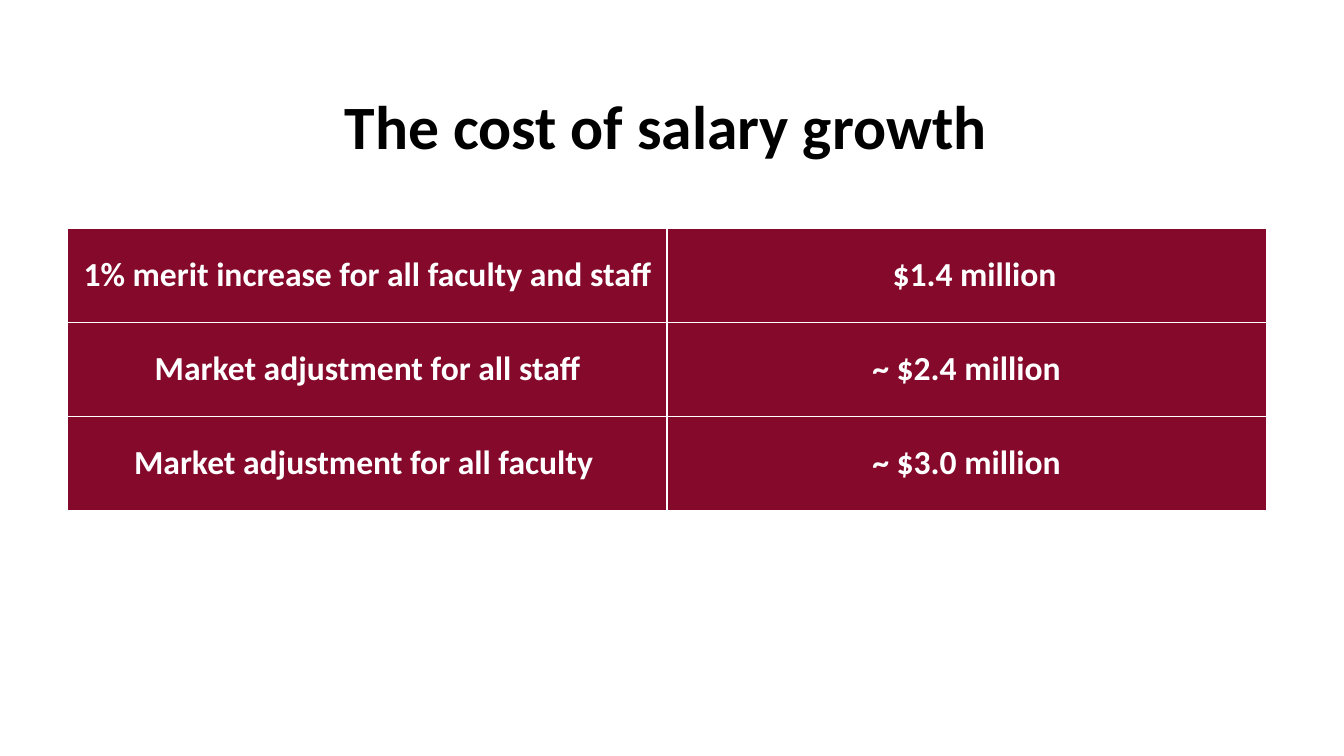
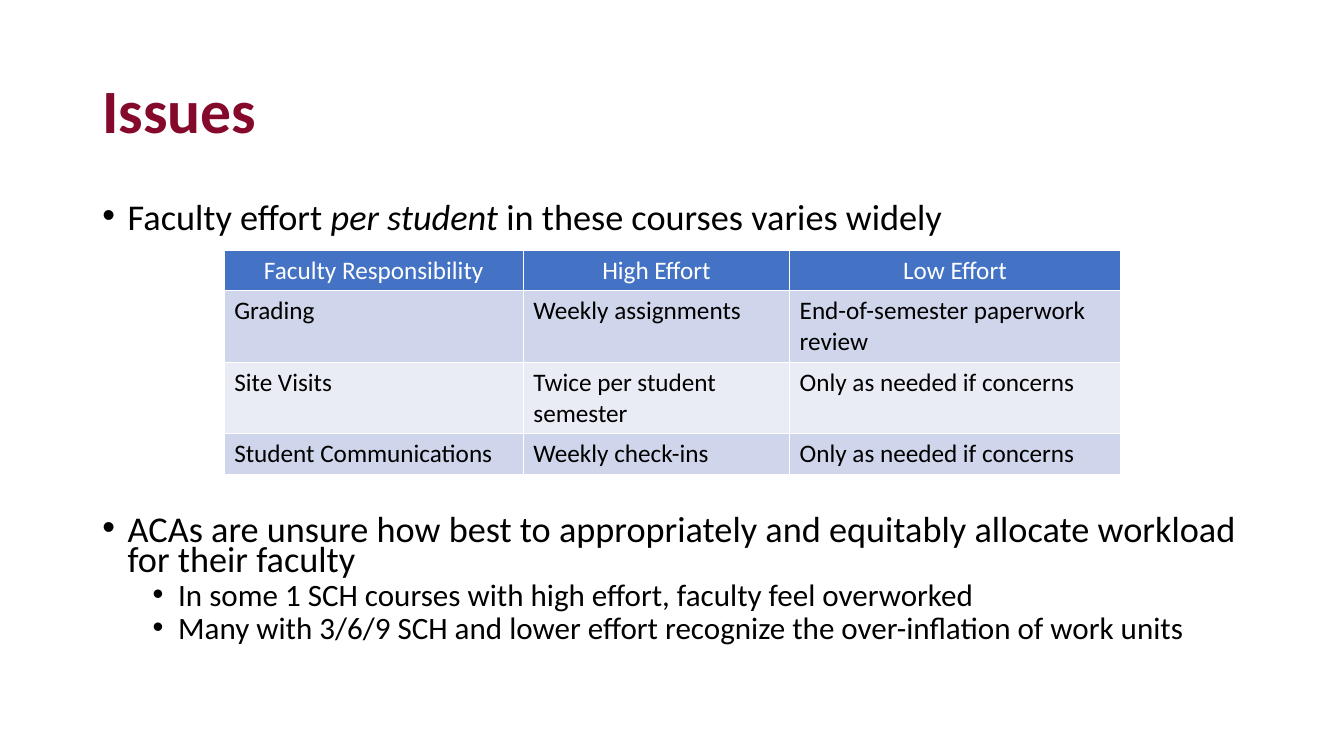
import lxml.etree
import pptx
import pptx.dml.color
import pptx.enum.text
import pptx.oxml.ns
import pptx.util

Cm, Pt = pptx.util.Cm, pptx.util.Pt
RGBColor = pptx.dml.color.RGBColor
ALIGN = pptx.enum.text.PP_ALIGN
ANCHOR = pptx.enum.text.MSO_ANCHOR
qn = pptx.oxml.ns.qn

MAROON = RGBColor(0x85, 0x09, 0x2A)
BLUE = RGBColor(0x44, 0x72, 0xC4)
BAND_DARK = RGBColor(0xCF, 0xD5, 0xEA)
BAND_LIGHT = RGBColor(0xE9, 0xEB, 0xF5)
BLACK = RGBColor(0, 0, 0)
WHITE = RGBColor(0xFF, 0xFF, 0xFF)

TITLE_FONT = {"name": "Calibri", "size": Pt(44), "bold": True}
COST_FONT = {"name": "Calibri", "size": Pt(24), "bold": True}
EFFORT_FONT = {"name": "Calibri", "size": Pt(18), "bold": False}
COST_CELL = {
    "vertical_anchor": ANCHOR.MIDDLE,
    "margin_left": Cm(0.33), "margin_right": Cm(0.33),
    "margin_top": Cm(0.18), "margin_bottom": Cm(0.18),
}


def add_run(paragraph, text, font, color):
    run = paragraph.add_run()
    run.text = text
    for name, value in font.items():
        setattr(run.font, name, value)
    run.font.color.rgb = color


def add_grid(slide, left, top, widths, heights, rows, row_styles, font, cell_format):
    """Draw a table with white rules; each row style is fill, text colour, alignment."""
    grid = slide.shapes.add_table(
        len(rows), len(widths), Cm(left), Cm(top), Cm(sum(widths)), Cm(sum(heights))).table
    for column, width in zip(grid.columns, widths):
        column.width = Cm(width)
    for r, (texts, height, (fill, color, align)) in enumerate(zip(rows, heights, row_styles)):
        grid.rows[r].height = Cm(height)
        for c, text in enumerate(texts):
            cell = grid.cell(r, c)
            for name, value in cell_format.items():
                setattr(cell, name, value)
            paragraph = cell.text_frame.paragraphs[0]
            paragraph.alignment = align
            add_run(paragraph, text, font, color)
            # Borders come before the fill in the cell properties
            properties = cell._tc.get_or_add_tcPr()
            for side in ("a:lnL", "a:lnR", "a:lnT", "a:lnB"):
                line = lxml.etree.SubElement(properties, qn(side), w=str(Pt(1)))
                solid = lxml.etree.SubElement(line, qn("a:solidFill"))
                lxml.etree.SubElement(solid, qn("a:srgbClr"), val=str(WHITE))
            cell.fill.solid()
            cell.fill.fore_color.rgb = fill
    return grid


deck = pptx.Presentation()
deck.slide_width, deck.slide_height = Cm(33.87), Cm(19.05)

# Slides and their titles: text, left, top, width, height, alignment, colour
titles = [
    ("The cost of salary growth", 1.55, 1.68, 30.48, 3.18, ALIGN.CENTER, BLACK),
    ("Issues", 2.33, 1.01, 29.21, 3.68, ALIGN.LEFT, MAROON),
]
slides = []
for text, left, top, width, height, align, color in titles:
    slide = deck.slides.add_slide(deck.slide_layouts[6])
    frame = slide.shapes.add_textbox(Cm(left), Cm(top), Cm(width), Cm(height)).text_frame
    frame.word_wrap = True
    frame.vertical_anchor = ANCHOR.MIDDLE
    heading = frame.paragraphs[0]
    heading.alignment, heading.line_spacing = align, 0.9
    add_run(heading, text, TITLE_FONT, color)
    slides.append(slide)
cost_slide, issues_slide = slides

# Salary costs
costs = [
    ("1% merit increase for all faculty and staff", "$1.4 million"),
    ("Market adjustment for all staff", "~ $2.4 million"),
    ("Market adjustment for all faculty ", "~ $3.0 million"),
]
cost_grid = add_grid(cost_slide, 1.71, 5.75, [15.1] * 2, [2.37] * 3, costs,
                     [(MAROON, WHITE, ALIGN.CENTER)] * 3, COST_FONT, COST_CELL)
cost_grid.cell(0, 1).margin_left = Cm(0.73)  # lines the amount up with those below

# Issues: each block is its top, its height and its (level, runs) bullets
issue_blocks = [
    (5.08, 1.2, [
        (0, [("Faculty effort ", False), ("per student", True),
             (" in these courses varies widely", False)]),
    ]),
    (12.93, 4.24, [
        (0, [("ACAs are unsure how best to appropriately and equitably allocate "
              "workload for their faculty", False)]),
        (1, [("In some 1 SCH courses with high effort, faculty feel overworked", False)]),
        (1, [("Many with 3/6/9 SCH and lower effort recognize the over-inflation "
              "of work units", False)]),
    ]),
]
# Size, space before and text indent by level
levels = [(Pt(25.9), Pt(10), Cm(0.64)), (Pt(22.2), Pt(5), Cm(1.91))]
for top, height, bullets in issue_blocks:
    frame = issues_slide.shapes.add_textbox(Cm(2.33), Cm(top), Cm(29.21), Cm(height)).text_frame
    frame.word_wrap = True
    for i, (level, runs) in enumerate(bullets):
        size, space_before, indent = levels[level]
        issue = frame.add_paragraph() if i else frame.paragraphs[0]
        issue.level, issue.line_spacing = level, 0.7
        issue.space_before = space_before if i else Pt(0)
        properties = issue._p.get_or_add_pPr()
        properties.set("marL", str(indent))
        properties.set("indent", str(-Cm(0.64)))
        lxml.etree.SubElement(properties, qn("a:buFont"), typeface="Arial")
        lxml.etree.SubElement(properties, qn("a:buChar"), char="•")
        for text, italic in runs:
            add_run(issue, text, {"name": "Calibri", "size": size, "italic": italic}, BLACK)

# Effort comparison
efforts = [
    ("Faculty Responsibility", "High Effort", "Low Effort"),
    ("Grading", "Weekly assignments", "End-of-semester paperwork review"),
    ("Site Visits", "Twice per student semester", "Only as needed if concerns"),
    ("Student Communications", "Weekly check-ins", "Only as needed if concerns"),
]
dark_row = (BAND_DARK, BLACK, ALIGN.LEFT)
light_row = (BAND_LIGHT, BLACK, ALIGN.LEFT)
add_grid(issues_slide, 5.65, 6.3, [7.54, 6.71, 8.33], [1.03, 1.8, 1.8, 1.03], efforts,
         [(BLUE, WHITE, ALIGN.CENTER), dark_row, light_row, dark_row], EFFORT_FONT, {})

deck.save("out.pptx")
